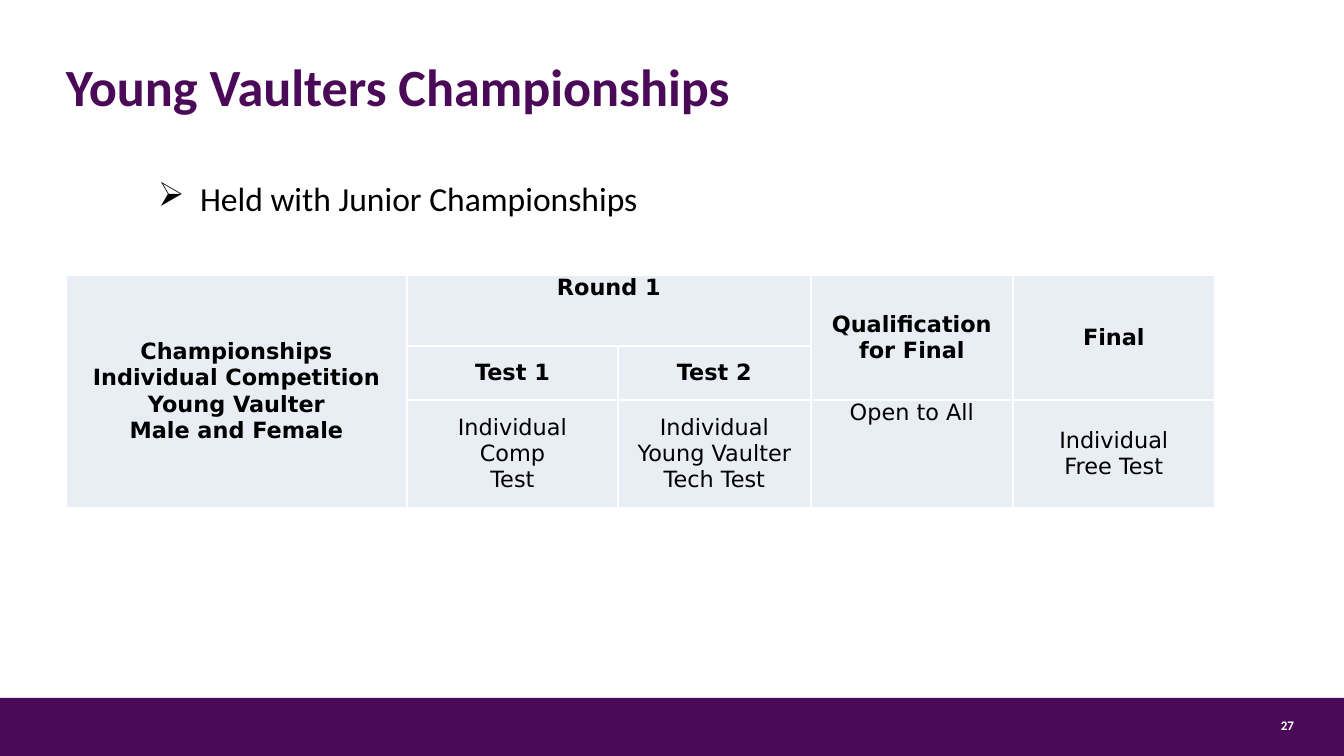
from lxml.etree import SubElement
from pptx import Presentation
from pptx.dml.color import RGBColor
from pptx.enum.shapes import MSO_SHAPE as Shape
from pptx.enum.text import MSO_ANCHOR as Anchor, PP_ALIGN as Align
from pptx.oxml.ns import qn
from pptx.util import Emu, Pt

SCALE = 914400 / 134.4
PURPLE = RGBColor(0x4B, 0x0A, 0x57)
WHITE = RGBColor(0xFF, 0xFF, 0xFF)
BLACK = RGBColor(0, 0, 0)
PALE = RGBColor(0xE9, 0xED, 0xF4)

COLS = [341, 211, 193, 202, 202]
ROWS = [71, 54, 106]
SPANS = [(0, 0, 2, 0), (0, 1, 0, 2), (0, 3, 1, 3), (0, 4, 1, 4)]
CELLS = {
    (0, 0): "Championships\nIndividual Competition\vYoung Vaulter\nMale and Female",
    (0, 1): "Round 1",
    (0, 3): "Qualification for Final",
    (0, 4): "Final",
    (1, 1): "Test 1",
    (1, 2): "Test 2",
    (2, 1): "Individual\nComp\nTest",
    (2, 2): "Individual Young Vaulter\nTech Test",
    (2, 3): "Open to All",
    (2, 4): "Individual\nFree Test",
}
TOP = [(0, 1), (2, 3)]


def px(n):
    return Emu(round(n * SCALE))


def style(para, size, color, bold=False, face="Calibri"):
    font = para.font
    font.name = face
    font.size = Pt(size)
    font.bold = bold
    font.color.rgb = color


def add_text(slide, text, box, size, color, bold=False, side=0):
    frame = slide.shapes.add_textbox(*map(px, box)).text_frame
    frame.word_wrap = True
    frame.margin_left = frame.margin_right = px(side)
    frame.margin_top = frame.margin_bottom = px(7)
    para = frame.paragraphs[0]
    para.text = text
    style(para, size, color, bold)
    return para


def add_bullet(para, mark, indent):
    props = para._p.get_or_add_pPr()
    props.set("marL", str(px(indent)))
    props.set("indent", str(-px(indent)))
    bullet = SubElement(props, qn("a:buChar"))
    bullet.set("char", mark)


def add_bar(slide, box, color):
    bar = slide.shapes.add_shape(Shape.RECTANGLE, *map(px, box))
    bar.shadow.inherit = False
    bar.fill.solid()
    bar.fill.fore_color.rgb = color
    bar.line.fill.background()


def add_edges(cell, color):
    props = cell._tc.get_or_add_tcPr()
    for side in ("lnL", "lnR", "lnT", "lnB"):
        line = SubElement(props, qn(f"a:{side}"), w=str(Pt(1)))
        fill = SubElement(line, qn("a:solidFill"))
        SubElement(fill, qn("a:srgbClr"), val=str(color))


def fill_cell(cell, text, bold, anchor):
    add_edges(cell, WHITE)
    cell.fill.solid()
    cell.fill.fore_color.rgb = PALE
    cell.margin_left = cell.margin_right = px(9)
    cell.margin_top = cell.margin_bottom = 0
    cell.vertical_anchor = anchor
    cell.text_frame.text = text
    for para in cell.text_frame.paragraphs:
        para.alignment = Align.CENTER
        style(para, 12, BLACK, bold, "DejaVu Sans")


def add_rounds(slide, left, top):
    box = (left, top, sum(COLS), sum(ROWS))
    table = slide.shapes.add_table(len(ROWS), len(COLS), *map(px, box)).table
    for col, width in zip(table.columns, COLS):
        col.width = px(width)
    for row, height in zip(table.rows, ROWS):
        row.height = px(height)
    for r in range(len(ROWS)):
        for c in range(len(COLS)):
            anchor = Anchor.TOP if (r, c) in TOP else Anchor.MIDDLE
            fill_cell(table.cell(r, c), CELLS.get((r, c), ""), r < 2, anchor)
    for r, c, end_r, end_c in SPANS:
        table.cell(r, c).merge(table.cell(end_r, end_c))


def main():
    deck = Presentation()
    deck.slide_width, deck.slide_height = px(1344), px(756)
    slide = deck.slides.add_slide(deck.slide_layouts[6])
    add_bar(slide, (0, 698, 1344, 58), PURPLE)
    page = add_text(slide, "27", (1275, 711, 25, 31), 7, WHITE, True)
    page.alignment = Align.CENTER
    title = add_text(slide, "Young Vaulters Championships",
                     (66, 47, 1132, 75), 28, PURPLE, True)
    title.line_spacing = Pt(34)
    note = add_text(slide, "Held with Junior Championships",
                    (145, 171, 989, 54), 18, BLACK, side=13)
    add_bullet(note, "➢", 42)
    add_rounds(slide, 66, 275)
    deck.save("out.pptx")


if __name__ == "__main__":
    main()
